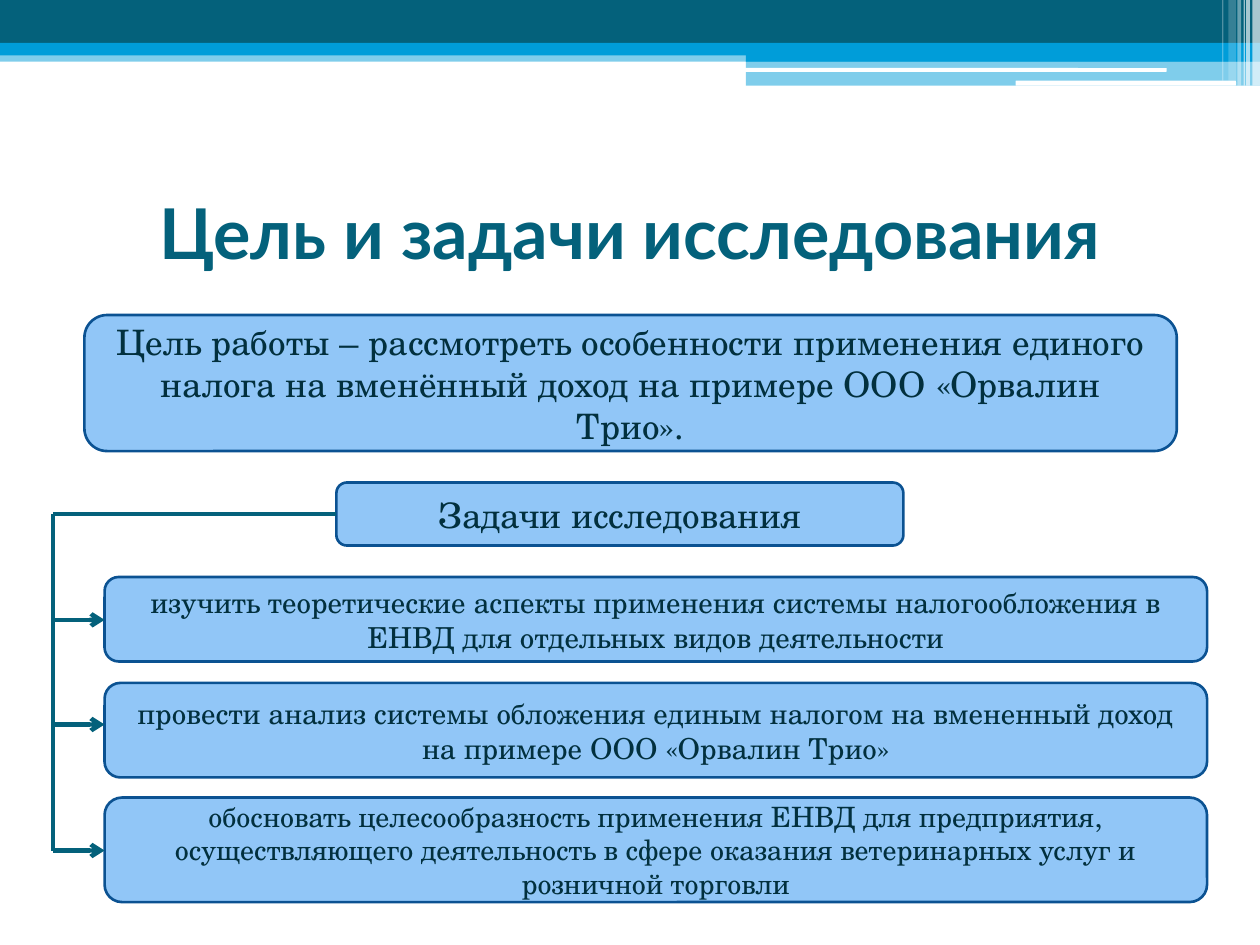
from lxml import etree
from pptx import Presentation
from pptx.dml.color import RGBColor
from pptx.enum.shapes import MSO_CONNECTOR as Link, MSO_SHAPE as Kind
from pptx.enum.text import MSO_ANCHOR as Anchor, PP_ALIGN as Align
from pptx.oxml.ns import qn
from pptx.util import Inches, Pt

TEAL = RGBColor(0x04, 0x61, 0x7B)
CYAN = RGBColor(0x00, 0x9D, 0xD9)
WHITE = RGBColor(0xFF, 0xFF, 0xFF)
PALE = RGBColor(0x91, 0xC6, 0xF7)
NAVY = RGBColor(0x0B, 0x52, 0x92)
INK = RGBColor(0x02, 0x30, 0x3E)

deck = Presentation()
deck.slide_width, deck.slide_height = Inches(10), Inches(7.5)
slide = deck.slides.add_slide(deck.slide_layouts[6])
shapes = slide.shapes


def add_box(kind, place, color):
    box = shapes.add_shape(kind, *map(Inches, place))
    box.shadow.inherit = False
    box.fill.solid()
    box.fill.fore_color.rgb = color
    box.line.fill.background()
    return box


def put_text(box, text, size, font, color, bold=False):
    frame = box.text_frame
    frame.word_wrap = True
    frame.vertical_anchor = Anchor.MIDDLE
    par = frame.paragraphs[0]
    par.alignment = Align.CENTER
    run = par.add_run()
    run.text = text
    run.font.size = Pt(size)
    run.font.name = font
    run.font.bold = bold
    run.font.color.rgb = color


# Header bands and stripes: kind, place, colour, opacity in percent
bands = [
    (Kind.RECTANGLE, (0, 0.4, 10, 0.09), CYAN, 50),
    (Kind.RECTANGLE, (0, 0, 10, 0.34), TEAL, 100),
    (Kind.RECTANGLE, (0, 0.34, 10, 0.1), CYAN, 100),
    (Kind.RECTANGLE, (5.92, 0.39, 4.08, 0.1), CYAN, 100),
    (Kind.RECTANGLE, (5.92, 0.48, 4.08, 0.2), CYAN, 50),
    (Kind.ROUNDED_RECTANGLE, (5.91, 0.54, 3.35, 0.03), WHITE, 100),
    (Kind.ROUNDED_RECTANGLE, (8.06, 0.64, 1.75, 0.04), WHITE, 100),
]
stripes = [
    (9.94, 0.06, 0.68, 65), (9.89, 0.03, 0.68, 65), (9.87, 0.01, 0.68, 60),
    (9.82, 0.03, 0.68, 40), (9.75, 0.06, 0.64, 20), (9.7, 0.01, 0.64, 30),
]
for left, width, height, alpha in stripes:
    bands.append((Kind.RECTANGLE, (left, 0, width, height), WHITE, alpha))

for kind, place, color, alpha in bands:
    band = add_box(kind, place, color)
    if alpha < 100:
        tint = band._element.spPr.find(qn("a:solidFill"))[0]
        etree.SubElement(tint, qn("a:alpha"), val=str(alpha * 1000))

# Title
title = shapes.add_textbox(Inches(0.5), Inches(1.25), Inches(9), Inches(1.17))
put_text(title, "Цель и задачи исследования", 40, "Lato", TEAL, True)

# Goal, heading and tasks
cards = [
    ((0.67, 2.5, 8.67, 1.08), 20,
     "Цель работы – рассмотреть особенности применения единого налога "
     "на вменённый доход на примере ООО «Орвалин Трио»."),
    ((2.67, 3.83, 4.5, 0.5), 20, "Задачи исследования"),
    ((0.83, 4.58, 8.75, 0.67), 16.5,
     "изучить теоретические аспекты применения системы налогообложения "
     "в ЕНВД для отдельных видов деятельности"),
    ((0.83, 5.42, 8.75, 0.75), 16.5,
     "провести анализ системы обложения единым налогом на вмененный доход "
     "на примере ООО «Орвалин Трио»"),
    ((0.83, 6.33, 8.75, 0.83), 16,
     "обосновать целесообразность применения ЕНВД для предприятия, "
     "осуществляющего деятельность в сфере оказания ветеринарных услуг "
     "и розничной торговли"),
]
for place, size, text in cards:
    card = add_box(Kind.ROUNDED_RECTANGLE, place, PALE)
    card.line.color.rgb = NAVY
    card.line.width = Pt(1.5)
    put_text(card, text, size, "TeX Gyre Schola", INK)

# Trunk from the heading, then an arrow to each task
trunk, top, base = 0.42, 4.08, 6.75
links = [((2.67, top, trunk, top), False), ((trunk, base, trunk, top), False)]
for y in (4.92, 5.75, base):
    links.append(((trunk, y, 0.83, y), True))

for ends, arrow in links:
    link = shapes.add_connector(Link.STRAIGHT, *map(Inches, ends))
    link.line.color.rgb = TEAL
    link.line.width = Pt(2.5)
    form = link._element.spPr
    if arrow:
        etree.SubElement(form.find(qn("a:ln")), qn("a:tailEnd"), type="arrow")
    etree.SubElement(form, qn("a:effectLst"))

deck.save("out.pptx")
